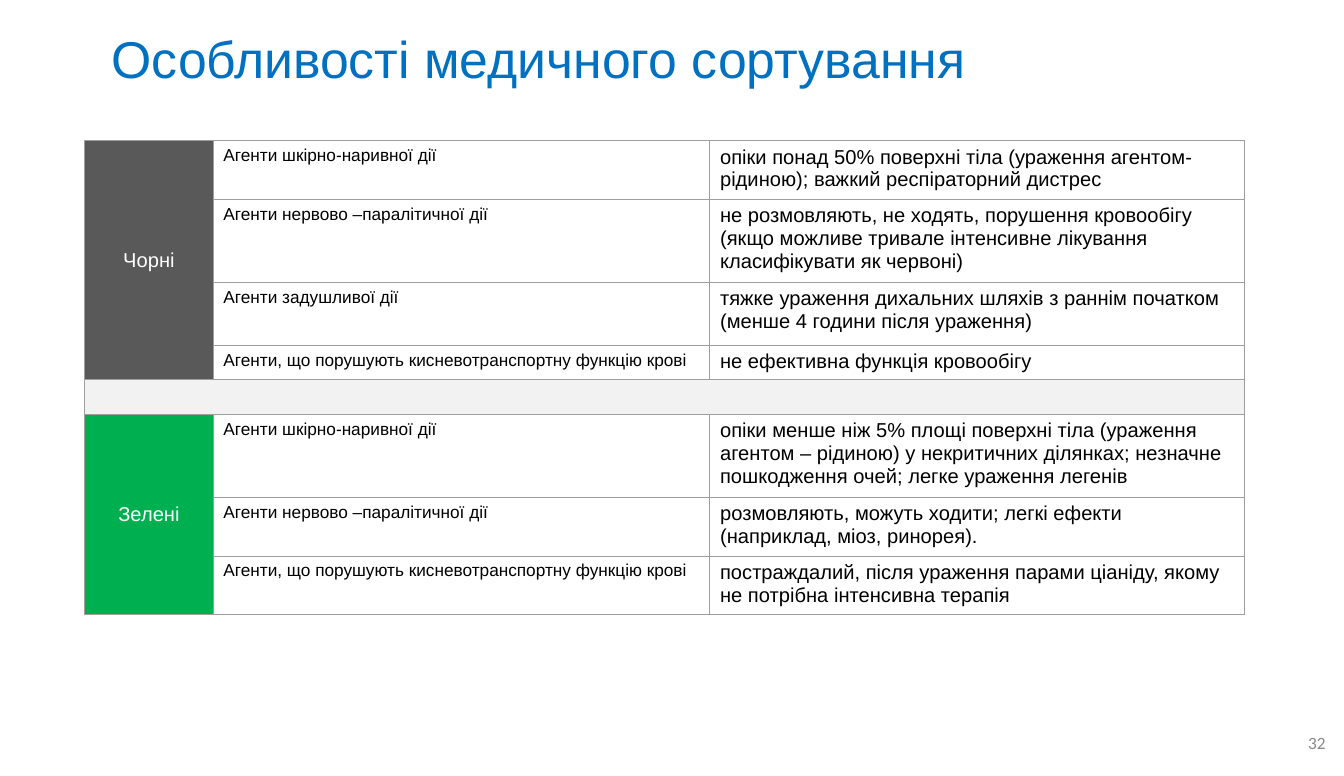
from lxml import etree
from pptx import Presentation
from pptx.dml.color import RGBColor
from pptx.enum.text import MSO_ANCHOR, PP_ALIGN
from pptx.oxml.ns import qn
from pptx.util import Inches, Pt

TOP, MIDDLE = MSO_ANCHOR.TOP, MSO_ANCHOR.MIDDLE
LEFT, CENTER, RIGHT, JUSTIFY = PP_ALIGN.LEFT, PP_ALIGN.CENTER, PP_ALIGN.RIGHT, PP_ALIGN.JUSTIFY

COLORS = {
    "title": "0070C0", "number": "888888", "text": "000000", "label": "FFFFFF",
    "black": "595959", "green": "00B050", "gap": "F2F2F2", "border": "9E9E9E",
}
BORDER_WIDTH = Pt(0.75)
COLUMN_WIDTHS = (1.24, 4.8, 5.17)
GAP_HEIGHT = 0.32

# Category label, fill, then rows of agent, signs and height
CATEGORIES = [
    ("Чорні", "black", [
        ("Агенти шкірно-наривної дії",
         "опіки понад 50% поверхні тіла (ураження агентом-рідиною); важкий респіраторний дистрес", 0.53),
        ("Агенти нервово –паралітичної дії",
         "не розмовляють, не ходять, порушення кровообігу (якщо можливе тривале інтенсивне "
         "лікування класифікувати як червоні)", 0.75),
        ("Агенти задушливої дії",
         "тяжке ураження дихальних шляхів з раннім початком (менше 4 години після ураження)", 0.61),
        ("Агенти, що порушують кисневотранспортну функцію крові",
         "не ефективна функція кровообігу", 0.33),
    ]),
    ("Зелені", "green", [
        ("Агенти шкірно-наривної дії",
         "опіки менше ніж 5% площі поверхні тіла (ураження агентом – рідиною) у некритичних "
         "ділянках; незначне пошкодження очей; легке ураження легенів", 0.75),
        ("Агенти нервово –паралітичної дії",
         "розмовляють, можуть ходити; легкі ефекти (наприклад, міоз, ринорея).", 0.53),
        ("Агенти, що порушують кисневотранспортну функцію крові",
         "постраждалий, після ураження парами ціаніду, якому не потрібна інтенсивна терапія", 0.53),
    ]),
]


def rgb(color):
    return RGBColor.from_string(COLORS[color])


def write(paragraph, text, size, color, align=LEFT, font="Arial"):
    paragraph.alignment = align
    run = paragraph.add_run()
    run.text = text
    for name, value in {"size": Pt(size), "name": font}.items():
        setattr(run.font, name, value)
    run.font.color.rgb = rgb(color)


def add_text(slide, box, text, size, color, align, font="Arial"):
    frame = slide.shapes.add_textbox(*map(Inches, box)).text_frame
    frame.word_wrap = True
    frame.vertical_anchor = MIDDLE
    write(frame.paragraphs[0], text, size, color, align, font)


def style_cell(cell):
    """Give a cell thin borders, no fill and a small empty line."""
    properties = cell._tc.get_or_add_tcPr()
    for side in ("a:lnL", "a:lnR", "a:lnT", "a:lnB"):
        line = etree.SubElement(properties, qn(side), w=str(BORDER_WIDTH))
        fill = etree.SubElement(line, qn("a:solidFill"))
        etree.SubElement(fill, qn("a:srgbClr"), val=COLORS["border"])
    cell.fill.background()
    paragraph = cell.text_frame.paragraphs[0]
    etree.SubElement(paragraph._p, qn("a:endParaRPr"), sz="1400")


def fill_cell(cell, color):
    cell.fill.solid()
    cell.fill.fore_color.rgb = rgb(color)


def add_triage_table(slide, box):
    row_count = sum(len(rows) for _, _, rows in CATEGORIES) + len(CATEGORIES) - 1
    table = slide.shapes.add_table(row_count, len(COLUMN_WIDTHS), *map(Inches, box)).table
    for flag in ("first_row", "horz_banding"):
        setattr(table, flag, False)
    for column, width in zip(table.columns, COLUMN_WIDTHS):
        column.width = Inches(width)
    for cell in table.iter_cells():
        style_cell(cell)

    top = 0
    for label, color, rows in CATEGORIES:
        # Grey band between categories
        if top:
            table.rows[top].height = Inches(GAP_HEIGHT)
            band = table.cell(top, 0)
            band.merge(table.cell(top, len(COLUMN_WIDTHS) - 1))
            fill_cell(band, "gap")
            top += 1

        # Category label down the left side
        category = table.cell(top, 0)
        category.merge(table.cell(top + len(rows) - 1, 0))
        category.vertical_anchor = MIDDLE
        fill_cell(category, color)
        write(category.text_frame.paragraphs[0], label, 14, "label", CENTER)

        # Agents and signs
        for index, (agent, signs, height) in enumerate(rows, top):
            table.rows[index].height = Inches(height)
            for column, text, size in ((1, agent, 12), (2, signs, 14)):
                cell = table.cell(index, column)
                cell.vertical_anchor = TOP
                write(cell.text_frame.paragraphs[0], text, size, "text")
        top += len(rows)


def main():
    deck = Presentation()
    deck.slide_width, deck.slide_height = Inches(12.99), Inches(7.5)
    slide = deck.slides.add_slide(deck.slide_layouts[6])
    add_text(slide, (12.32, 6.98, 0.59, 0.39), "32", 12, "number", RIGHT, "Calibri")
    add_text(slide, (0.98, 0.19, 11.39, 0.74), "Особливості медичного сортування", 36, "title", JUSTIFY)
    add_triage_table(slide, (0.82, 1.36, 11.21, 4.35))
    deck.save("out.pptx")


if __name__ == "__main__":
    main()
